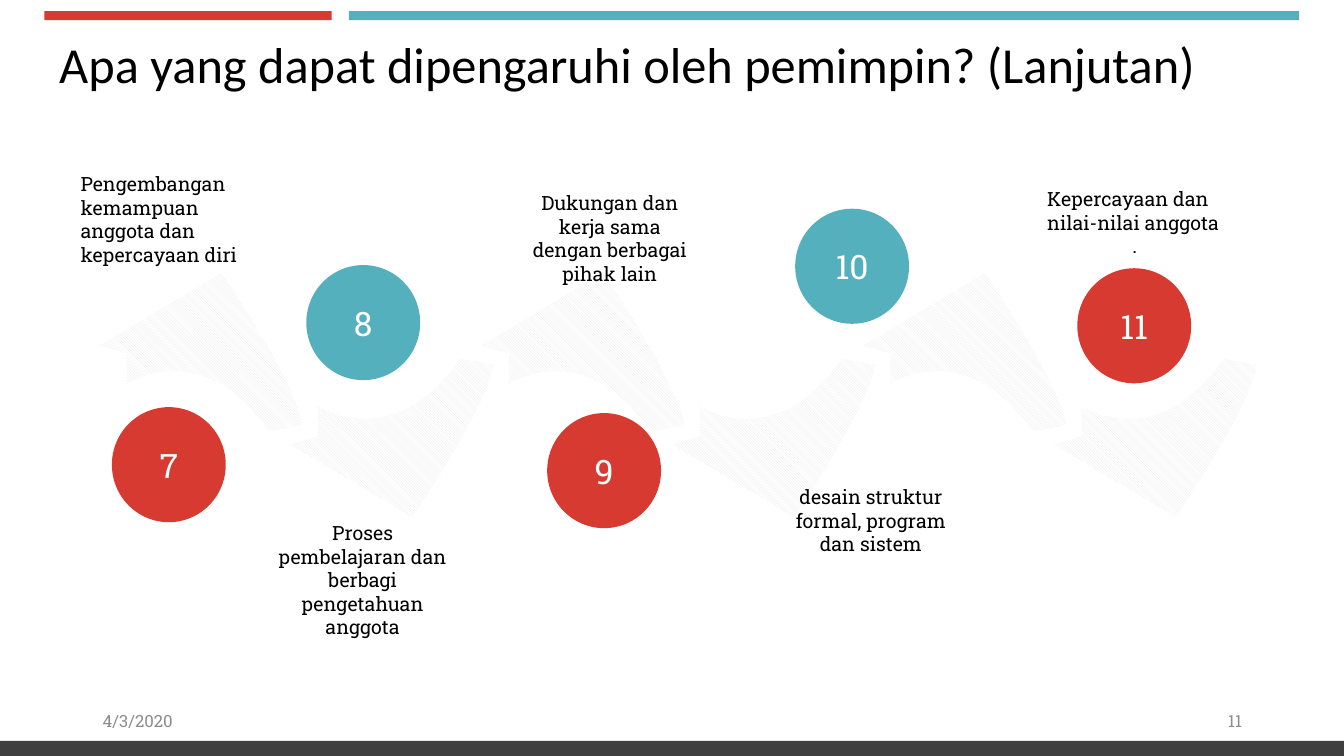
from copy import deepcopy

from pptx import Presentation
from pptx import util as u
from pptx.dml.color import RGBColor
from pptx.enum import dml, shapes, text
from pptx.oxml.ns import qn

Cm, Pt = u.Cm, u.Pt
LEFT, CENTER, RIGHT = text.PP_ALIGN.LEFT, text.PP_ALIGN.CENTER, text.PP_ALIGN.RIGHT
TOP, MIDDLE, BOTTOM = (text.MSO_ANCHOR.TOP, text.MSO_ANCHOR.MIDDLE,
                       text.MSO_ANCHOR.BOTTOM)

# Content; positions in cm
COLORS = {"red": "D63A31", "teal": "55B0BD", "dark": "3F3F3F", "grey": "8C8C8C",
          "black": "000000", "white": "FFFFFF", "stripe": "E7E6E6"}
HEADING, BODY = "Calibri", "Roboto Slab"
TITLE = "Apa yang dapat dipengaruhi oleh pemimpin? (Lanjutan)"
BARS = [(1.12, 0.28, 7.24, 0.23, "red"),
        (8.79, 0.28, 23.95, 0.23, "teal"),
        (0, 18.67, 33.87, 0.38, "dark")]
FOOTER = [("4/3/2020", 2.34, LEFT), ("11", 23.93, RIGHT)]

# number, colour, circle left/top, label left/top/height, anchor, paragraphs
POINTS = [
    ("7", "red", (2.82, 10.26), (2.03, 4.32, 2.39), BOTTOM,
     [("Pengembangan kemampuan anggota dan kepercayaan diri", LEFT)]),
    ("8", "teal", (7.72, 6.68), (6.93, 13.13, 3.0), TOP,
     [("Proses pembelajaran dan berbagi pengetahuan anggota", CENTER)]),
    ("9", "red", (13.79, 10.41), (13.16, 4.8, 2.39), BOTTOM,
     [("Dukungan dan kerja sama dengan berbagai pihak lain", CENTER)]),
    ("10", "teal", (20.04, 5.26), (19.74, 12.22, 1.8), TOP,
     [("desain struktur formal, program dan sistem", CENTER)]),
    ("11", "red", (27.15, 6.76), (26.39, 4.7, 1.8), BOTTOM,
     [("Kepercayaan dan nilai-nilai anggota", LEFT), (".", CENTER)]),
]
CIRCLE_W, CIRCLE_H, LABEL_W = 2.87, 2.9, 4.42

# Wave arrow outline; the points at CURVES are control points
ARROW = [(0, 1.83), (0.69, 2.03), (0.69, 2.79), (2.62, 1.55), (4.27, 3.99),
         (5.11, 3.84), (5.11, 3.02), (3.07, 0), (0, 1.83)]
CURVES = (2, 5)
ARROW_COUNT, ARROW_LEFT, ARROW_STEP = 6, 2.51, 4.81
ARROW_H, UPPER_TOP, LOWER_TOP = 3.99, 6.88, 9.04

prs = Presentation()
prs.slide_width, prs.slide_height = Cm(33.87), Cm(19.05)
slide = prs.slides.add_slide(prs.slide_layouts[6])


def rgb(name):
    return RGBColor.from_string(COLORS[name])


def add_solid(kind, left, top, width, height, color):
    solid = slide.shapes.add_shape(kind, Cm(left), Cm(top), Cm(width), Cm(height))
    solid.shadow.inherit = False
    solid.fill.solid()
    solid.fill.fore_color.rgb = rgb(color)
    solid.line.fill.background()
    return solid


def write(frame, paragraphs, size, color, font=BODY, anchor=MIDDLE, spacing=None):
    frame.word_wrap = True
    frame.vertical_anchor = anchor
    for i, (words, align) in enumerate(paragraphs):
        par = frame.add_paragraph() if i else frame.paragraphs[0]
        par.alignment = align
        par.line_spacing = spacing
        run = par.add_run()
        run.text = words
        run.font.size, run.font.name = Pt(size), font
        run.font.color.rgb = rgb(color)


def add_text(left, top, width, height, paragraphs, size, color, tight=True, **style):
    frame = slide.shapes.add_textbox(Cm(left), Cm(top), Cm(width),
                                     Cm(height)).text_frame
    if tight:
        frame.margin_left = frame.margin_right = 0
        frame.margin_top = frame.margin_bottom = 0
        frame.auto_size = text.MSO_AUTO_SIZE.SHAPE_TO_FIT_TEXT
    write(frame, paragraphs, size, color, **style)


def add_arrow(left, top, flipped):
    outline = [(Cm(left + x), Cm(top + (ARROW_H - y if flipped else y)))
               for x, y in ARROW]
    builder = slide.shapes.build_freeform(*outline[0])
    builder.add_line_segments(outline[1:], close=True)
    arrow = builder.convert_to_shape()
    arrow.shadow.inherit = False
    arrow.line.fill.background()
    arrow.fill.patterned()
    arrow.fill.pattern = dml.MSO_PATTERN.LIGHT_DOWNWARD_DIAGONAL
    arrow.fill.fore_color.rgb = rgb("stripe")
    arrow.fill.back_color.rgb = rgb("white")
    # Merge each control point and the point after it into a Bezier curve
    segments = list(arrow.element.iter(qn("a:lnTo")))
    for i in CURVES:
        before, curve, after = segments[i - 1:i + 2]
        curve.tag = qn("a:cubicBezTo")
        curve.insert(0, deepcopy(before[0]))
        curve.append(after[0])
        after.getparent().remove(after)


# Bars, footer and title
for *box, color in BARS:
    add_solid(shapes.MSO_SHAPE.RECTANGLE, *box, color)
for words, left, align in FOOTER:
    add_text(left, 17.65, 7.62, 1.02, [(words, align)], 12, "grey", tight=False)
add_text(0, 1.02, 31.62, 1.4, [(TITLE, CENTER)], 36, "black",
         font=HEADING, anchor=TOP, spacing=0.9)

# Wave of arrows, alternating up and down
for i in range(ARROW_COUNT):
    lower = i % 2 == 1
    add_arrow(ARROW_LEFT + i * ARROW_STEP, LOWER_TOP if lower else UPPER_TOP, lower)

# Numbered points
for number, color, spot, (left, top, height), anchor, paragraphs in POINTS:
    circle = add_solid(shapes.MSO_SHAPE.OVAL, *spot, CIRCLE_W, CIRCLE_H, color)
    write(circle.text_frame, [(number, CENTER)], 24, "white")
    add_text(left, top, LABEL_W, height, paragraphs, 14, "black", anchor=anchor)

prs.save("out.pptx")
